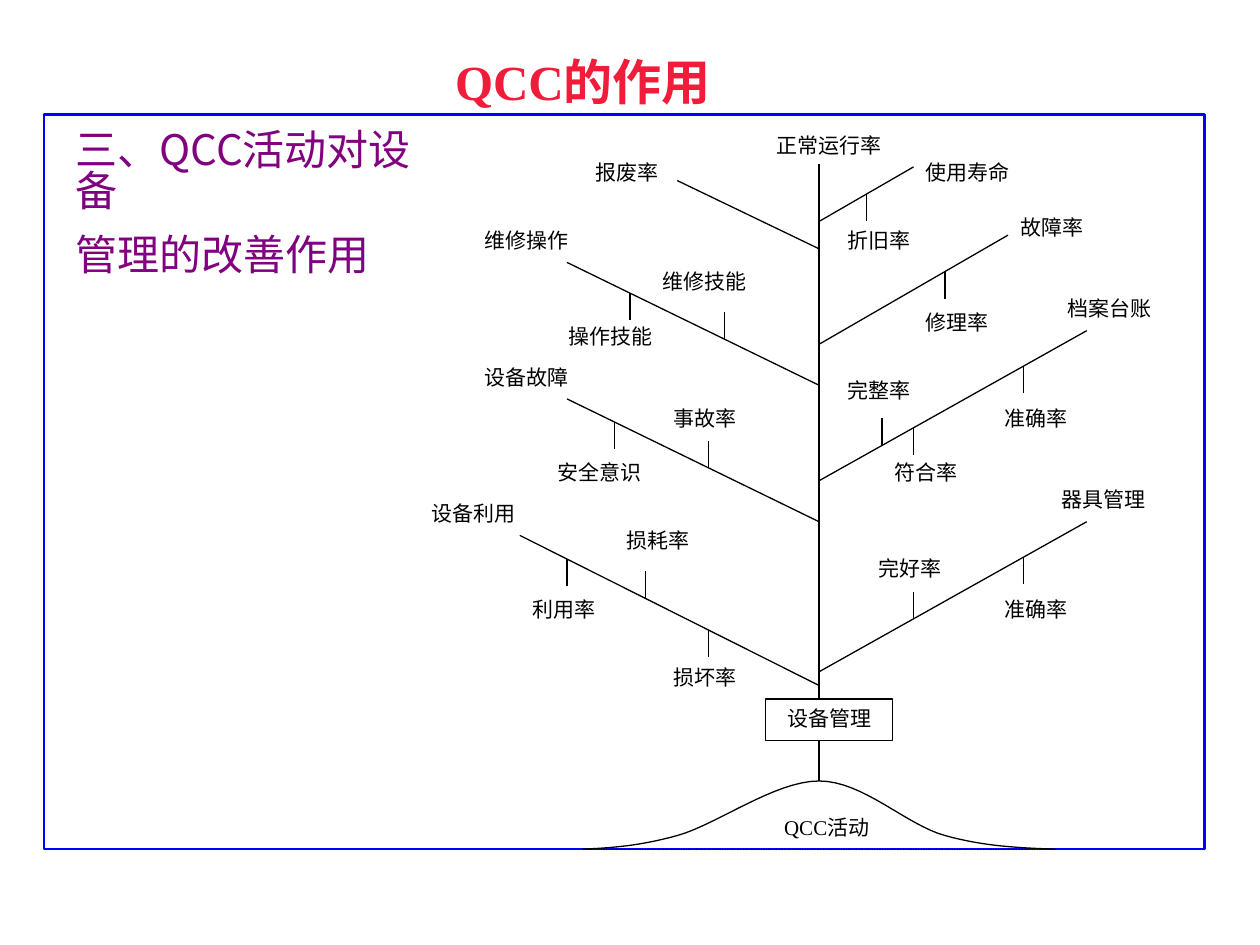
from lxml import etree
from pptx import Presentation
from pptx import util as u
from pptx.dml.color import RGBColor
from pptx.enum import dml, shapes, text
from pptx.oxml.ns import qn

HUES = {"title": "F11B3A", "head": "800080", "frame": "0000FF", "ink": "000000"}
SERIF, SANS = "Times New Roman", "Noto Sans CJK SC"
COLS, ROWS, TRUNK = 80, 53, 52
DOWN, UP = 2, -2

# name, label cell, tip cell, root row, twigs (name, column, direction, label cell)
BOUGHS = [
    ("使用寿命", (58, 2), (58, 3), 7, [("折旧率", 55, DOWN, (53, 7))]),
    ("故障率", (64, 6), (64, 8), 16, [("修理率", 60, DOWN, (58, 13))]),
    ("档案台账", (67, 12), (69, 15), 26, [
        ("完整率", 56, UP, (53, 18)),
        ("符合率", 58, DOWN, (56, 24)),
        ("准确率", 65, DOWN, (63, 20))]),
    ("器具管理", (66.6, 26), (69, 29), 40, [
        ("完好率", 58, UP, (55, 31)),
        ("准确率", 65, DOWN, (63, 34))]),
    ("报废率", (37, 2), (43, 4), 9, []),
    ("维修操作", (30, 7), (36, 10), 19, [
        ("操作技能", 40, DOWN, (35.3, 14)),
        ("维修技能", 46, UP, (41.3, 10))]),
    ("设备故障", (30, 17), (36, 20), 29, [
        ("安全意识", 39, DOWN, (34.6, 24)),
        ("事故率", 45, UP, (42, 20))]),
    ("设备利用", (26.6, 27), (33, 30), 41, [
        ("利用率", 36, DOWN, (33, 34)),
        ("损耗率", 41, UP, (39, 29)),
        ("损坏率", 45, DOWN, (42, 39))]),
]
HILL = [
    ((37, 53), (38.7, 52.9), (40.5, 52.8), (43, 52)),
    ((43, 52), (45.5, 51.2), (49.2, 48), (52, 48)),
    ((52, 48), (54.8, 48), (57.5, 51.2), (60, 52)),
    ((60, 52), (62.5, 52.8), (64.7, 52.9), (67, 53)),
]


def color(key):
    return RGBColor.from_string(HUES[key])


def style(run, font, size, key, bold=False):
    run.font.name, run.font.size, run.font.bold = font, u.Pt(size), bold
    run.font.color.rgb = color(key)
    if font == SANS:
        face = etree.SubElement(run.font._element, qn("a:ea"))
        face.set("typeface", font)


def field(slide, box):
    frame = slide.shapes.add_textbox(*map(u.Inches, box)).text_frame
    frame.word_wrap = True
    return frame


def outline(shape, key, width):
    shape.shadow.inherit = False
    shape.fill.background()
    shape.line.color.rgb = color(key)
    shape.line.width = u.Pt(width)


def block(slide, box, key, width):
    shape = slide.shapes.add_shape(shapes.MSO_SHAPE.RECTANGLE, *map(u.Inches, box))
    outline(shape, key, width)
    return shape


def title(slide, box):
    frame = field(slide, box)
    frame.vertical_anchor = text.MSO_ANCHOR.MIDDLE
    para = frame.paragraphs[0]
    para.alignment = text.PP_ALIGN.CENTER
    for words, font in (("QCC", SERIF), ("的作用 ", SANS)):
        run = para.add_run()
        run.text = words
        style(run, font, 28, "title", True)


def heading(slide, box):
    frame = field(slide, box)
    frame.text = "三、QCC活动对设备\n管理的改善作用"
    for para in frame.paragraphs:
        para.line_spacing = 0.82
        style(para.runs[0], SANS, 24, "head")
    frame.paragraphs[1].space_before = u.Pt(13)


def tree(slide, box):
    """Draw the tree on a grid of COLS by ROWS that fills the box."""
    left, top, wide, high = box

    def spot(cell):
        return left + cell[0] * wide / COLS, top + cell[1] * high / ROWS

    def line(start, end):
        ends = map(u.Inches, spot(start) + spot(end))
        item = slide.shapes.add_connector(shapes.MSO_CONNECTOR.STRAIGHT, *ends)
        item.line.color.rgb = color("ink")
        item.line.width = u.Pt(0.75)
        etree.SubElement(item._element.spPr, qn("a:effectLst"))
        return item

    def write(frame, words, align):
        frame.text = words
        frame.paragraphs[0].alignment = align
        style(frame.paragraphs[0].runs[0], SERIF, 12, "ink")

    def label(words, cell):
        size = (0.25 + len(words) / 6, 0.32)
        write(field(slide, spot(cell) + size), words, text.PP_ALIGN.JUSTIFY)

    def bough(name, place, tip, root, twigs):
        line(tip, (TRUNK, root))
        label(name, place)
        slope = (root - tip[1]) / (TRUNK - tip[0])
        for twig, col, reach, cell in twigs:
            row = tip[1] + slope * (col - tip[0])
            line((col, row), (col, row + reach))
            label(twig, cell)

    def hill():
        steps = 16
        dots = [spot(HILL[0][0])]
        for a, b, c, d in HILL:
            for i in range(1, steps + 1):
                t = i / steps
                s = 1 - t
                dots.append(spot([
                    s**3 * p + 3 * s * s * t * q + 3 * s * t * t * r + t**3 * e
                    for p, q, r, e in zip(a, b, c, d)]))
        dots = [tuple(map(u.Inches, dot)) for dot in dots]
        path = slide.shapes.build_freeform(*dots[0])
        path.add_line_segments(dots[1:], close=False)
        outline(path.convert_to_shape(), "ink", 0.75)
        line(HILL[0][0], HILL[-1][-1]).line.dash_style = dml.MSO_LINE.ROUND_DOT

    hill()
    label("QCC活动", (49, 50))
    line((TRUNK, 2.8), (TRUNK, 42))
    line((TRUNK, 45), (TRUNK, 48))
    label("正常运行率", (48.5, 0))
    for item in BOUGHS:
        bough(*item)
    base = block(slide, spot((48.6, 42)) + (1.01, 0.33), "ink", 0.75)
    base.text_frame.vertical_anchor = text.MSO_ANCHOR.TOP
    write(base.text_frame, "设备管理", text.PP_ALIGN.CENTER)


def main():
    deck = Presentation()
    deck.slide_width, deck.slide_height = u.Inches(10), u.Inches(7.5)
    slide = deck.slides.add_slide(deck.slide_layouts[6])
    title(slide, (1.67, 0.44, 6, 0.4))
    block(slide, (0.35, 0.91, 9.21, 5.83), "frame", 1.5)
    heading(slide, (0.5, 1, 3.08, 1.1))
    tree(slide, (0, 1, 10, 5.74))
    deck.save("out.pptx")


if __name__ == "__main__":
    main()
